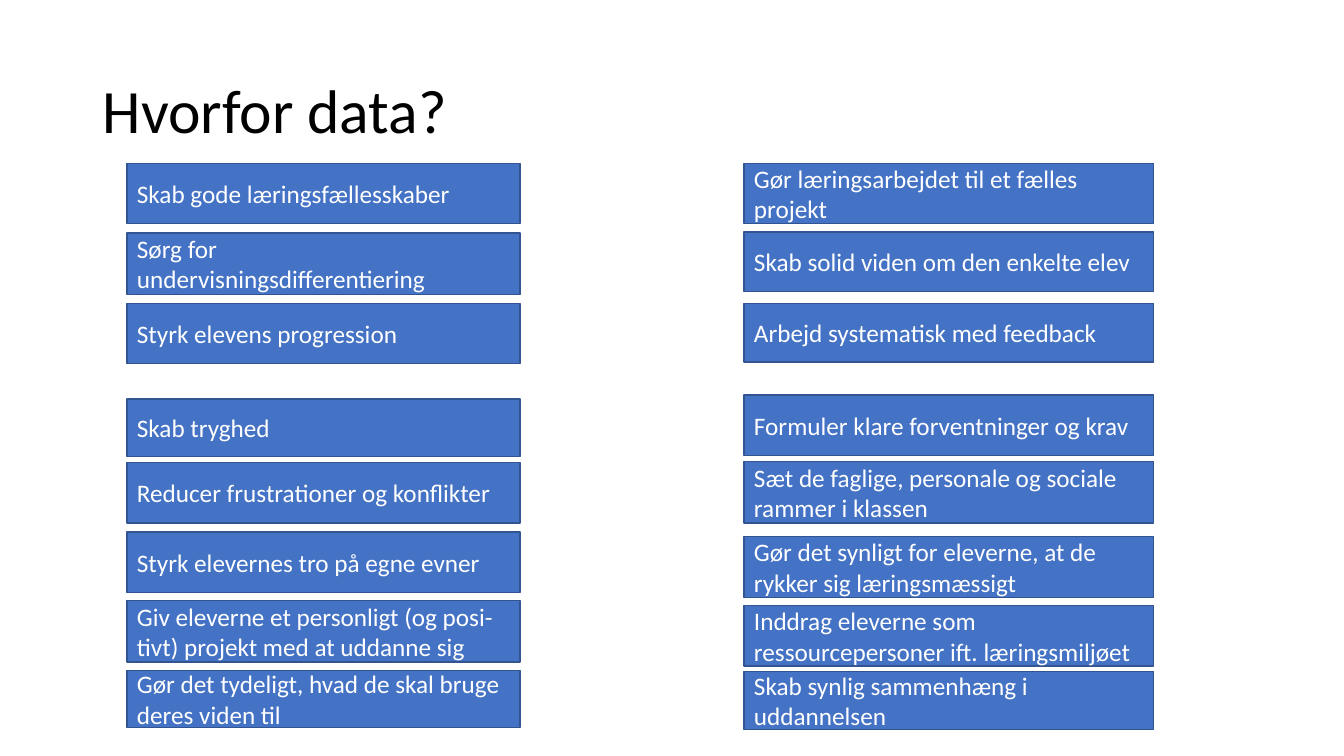
import dataclasses

import pptx
import pptx.dml.color
import pptx.enum.shapes
import pptx.enum.text
import pptx.util

Inches = pptx.util.Inches
COLORS = {"box": "4472C4", "edge": "325491", "title": "000000", "text": "FFFFFF"}
FONT = "Calibri"


@dataclasses.dataclass
class Box:
    top: float
    height: float
    text: str


@dataclasses.dataclass
class Column:
    left: float
    width: float
    boxes: list[Box]


COLUMNS = [
    Column(1.26, 3.9, [
        Box(1.62, 0.6, "Skab gode læringsfællesskaber"),
        Box(2.31, 0.61, "Sørg for undervisningsdifferentiering"),
        Box(3.01, 0.6, "Styrk elevens progression"),
        Box(3.96, 0.57, "Skab tryghed"),
        Box(4.59, 0.6, "Reducer frustrationer og konflikter"),
        Box(5.28, 0.6, "Styrk elevernes tro på egne evner"),
        Box(5.96, 0.61, "Giv eleverne et personligt (og posi-tivt) projekt med at uddanne sig"),
        Box(6.65, 0.57, "Gør det tydeligt, hvad de skal bruge deres viden til"),
    ]),
    Column(7.38, 4.06, [
        Box(1.62, 0.6, "Gør læringsarbejdet til et fælles projekt"),
        Box(2.3, 0.59, "Skab solid viden om den enkelte elev"),
        Box(3.01, 0.58, "Arbejd systematisk med feedback"),
        Box(3.92, 0.6, "Formuler klare forventninger og krav"),
        Box(4.58, 0.61, "Sæt de faglige, personale og sociale rammer i klassen"),
        Box(5.32, 0.61, "Gør det synligt for eleverne, at de rykker sig læringsmæssigt"),
        Box(6.01, 0.6, "Inddrag eleverne som ressourcepersoner ift. læringsmiljøet"),
        Box(6.66, 0.58, "Skab synlig sammenhæng i uddannelsen"),
    ]),
]


def color(name: str) -> pptx.dml.color.RGBColor:
    return pptx.dml.color.RGBColor.from_string(COLORS[name])


def write(shape, text: str, size: int, tint: str) -> None:
    """Put left-aligned, vertically centred text in a shape."""
    frame = shape.text_frame
    frame.text = text
    frame.word_wrap = True
    frame.vertical_anchor = pptx.enum.text.MSO_ANCHOR.MIDDLE
    para = frame.paragraphs[0]
    para.alignment = pptx.enum.text.PP_ALIGN.LEFT
    font = para.runs[0].font
    font.name = FONT
    font.size = pptx.util.Pt(size)
    font.color.rgb = color(tint)


def add_title(slide, text: str) -> None:
    title = slide.shapes.add_textbox(Inches(0.92), Inches(0.4), Inches(11.5), Inches(1.45))
    write(title, text, 44, "title")
    title.text_frame.paragraphs[0].line_spacing = 0.9


def add_box(slide, column: Column, box: Box) -> None:
    shape = slide.shapes.add_shape(
        pptx.enum.shapes.MSO_SHAPE.RECTANGLE,
        Inches(column.left), Inches(box.top), Inches(column.width), Inches(box.height))
    shape.shadow.inherit = False
    shape.fill.solid()
    shape.fill.fore_color.rgb = color("box")
    shape.line.color.rgb = color("edge")
    shape.line.width = pptx.util.Pt(1)
    write(shape, box.text, 18, "text")


def main() -> None:
    deck = pptx.Presentation()
    deck.slide_width = Inches(13.33)
    deck.slide_height = Inches(7.5)
    slide = deck.slides.add_slide(deck.slide_layouts[6])
    add_title(slide, "Hvorfor data?")
    for column in COLUMNS:
        for box in column.boxes:
            add_box(slide, column, box)
    deck.save("out.pptx")


if __name__ == "__main__":
    main()
